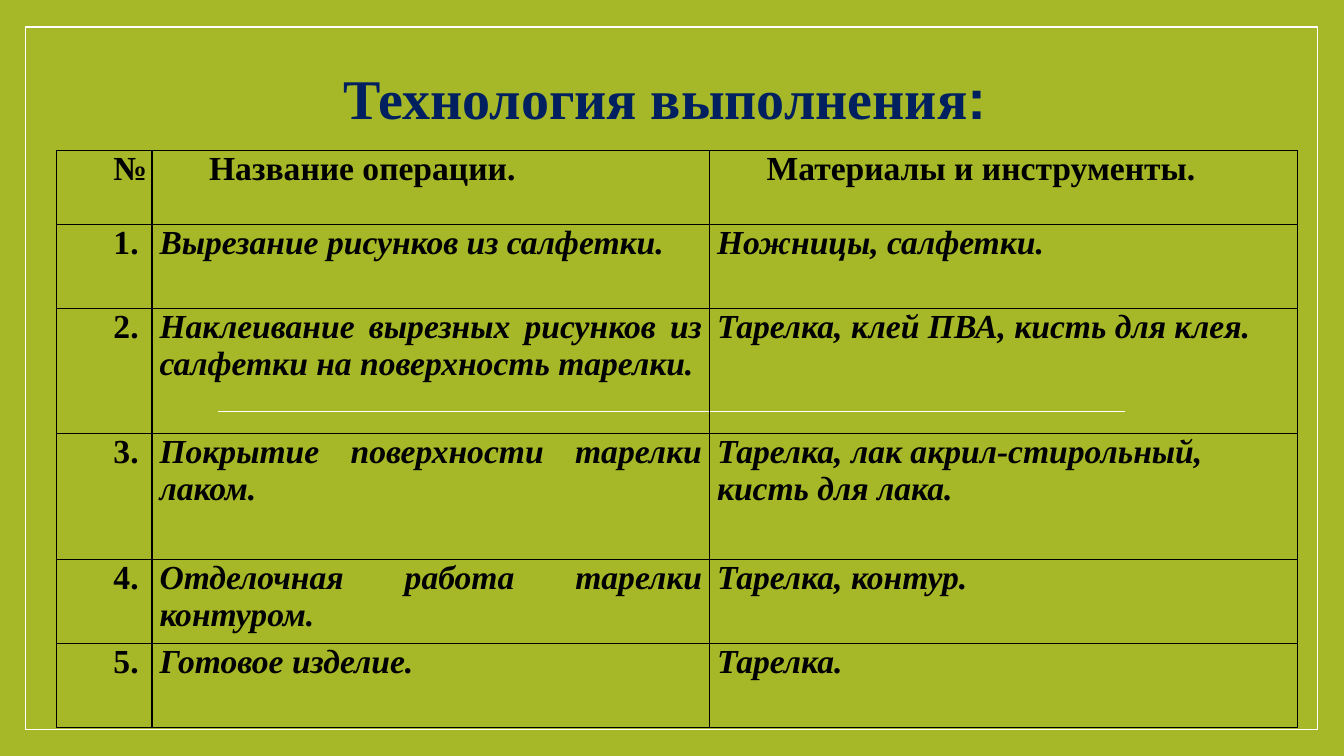
"""Build a slide with a table of the steps for decorating a plate."""
from lxml import etree
from pptx import Presentation
from pptx.dml.color import RGBColor
from pptx.enum.shapes import MSO_CONNECTOR, MSO_SHAPE
from pptx.enum.text import MSO_ANCHOR, PP_ALIGN
from pptx.oxml import parse_xml
from pptx.oxml.ns import qn
from pptx.util import Cm, Pt

LEFT, CENTER, JUSTIFY = PP_ALIGN.LEFT, PP_ALIGN.CENTER, PP_ALIGN.JUSTIFY
MIDDLE = MSO_ANCHOR.MIDDLE
RECTANGLE = MSO_SHAPE.RECTANGLE
STRAIGHT = MSO_CONNECTOR.STRAIGHT
COLORS = {"olive": "A6B727", "white": "FFFFFF", "navy": "002060", "black": "000000"}
DRAWING_NS = "http://schemas.openxmlformats.org/drawingml/2006/main"


def write(paragraph, text, size=24, color="black", font="Times New Roman",
          italic=False, align=LEFT, indent=0):
    """Add a bold run to the paragraph and set the paragraph's layout."""
    paragraph.alignment = align
    layout = paragraph._p.get_or_add_pPr()
    layout.set("marL", "0")
    layout.set("indent", str(Cm(indent)))
    run = paragraph.add_run()
    run.text = text
    run.font.name = font
    run.font.size = Pt(size)
    run.font.bold = True
    run.font.italic = italic
    run.font.color.rgb = RGBColor.from_string(COLORS[color])


presentation = Presentation()
presentation.slide_width, presentation.slide_height = Cm(33.87), Cm(19.05)
slide = presentation.slides.add_slide(presentation.slide_layouts[5])
slide.background.fill.solid()
slide.background.fill.fore_color.rgb = RGBColor.from_string(COLORS["olive"])

frame = slide.shapes.add_shape(RECTANGLE, Cm(0.64), Cm(0.68), Cm(32.56), Cm(17.7))
frame.shadow.inherit = False
frame.fill.solid()
frame.fill.fore_color.rgb = RGBColor.from_string(COLORS["olive"])
frame.line.color.rgb = RGBColor.from_string(COLORS["white"])
frame.line.width = Pt(1)
slide.shapes._spTree.insert(2, frame._element)

divider = slide.shapes.add_connector(STRAIGHT, Cm(5.49), Cm(10.36), Cm(28.35), Cm(10.36))
divider.line.color.rgb = RGBColor.from_string(COLORS["white"])
divider.line.width = Pt(0.79)
etree.SubElement(divider._element.spPr, qn("a:effectLst"))

title = slide.shapes.title
title.left, title.top, title.width, title.height = Cm(2.4), Cm(1.4), Cm(28.7), Cm(2.1)
title.text_frame.vertical_anchor = MIDDLE
heading = title.text_frame.paragraphs[0]
write(heading, "Технология выполнения", size=40, color="navy", align=CENTER)
write(heading, ":", size=40, color="navy", font="Arial", align=CENTER)

steps = [
    ("№", "Название операции.", "Материалы и инструменты."),
    ("1.", "Вырезание рисунков из салфетки.", "Ножницы, салфетки."),
    ("2.", "Наклеивание вырезных рисунков из салфетки на поверхность тарелки.",
     "Тарелка, клей ПВА, кисть для клея."),
    ("3.", "Покрытие поверхности тарелки лаком.",
     "Тарелка, лак акрил-стирольный,\nкисть для лака."),
    ("4.", "Отделочная работа тарелки контуром.", "Тарелка, контур."),
    ("5.", "Готовое изделие.", "Тарелка."),
]
column_widths = [2.41, 14.05, 14.81]
row_heights = [1.86, 2.12, 3.16, 3.16, 2.12, 2.12]

operations = slide.shapes.add_table(
    len(steps), len(column_widths), Cm(1.42), Cm(3.79),
    Cm(sum(column_widths)), Cm(sum(row_heights))).table
operations.first_row = operations.horz_banding = False
for column, width in zip(operations.columns, column_widths):
    column.width = Cm(width)

for row_index, (row, step, height) in enumerate(zip(operations.rows, steps, row_heights)):
    row.height = Cm(height)
    for column_index, (cell, text) in enumerate(zip(row.cells, step)):
        cell.margin_left = cell.margin_right = Cm(0.19)
        cell.margin_top = cell.margin_bottom = 0
        is_label = row_index == 0 or column_index == 0
        for line_index, line in enumerate(text.split("\n")):
            frame_text = cell.text_frame
            paragraph = frame_text.add_paragraph() if line_index else frame_text.paragraphs[0]
            write(paragraph, line, italic=not is_label,
                  align=JUSTIFY if column_index else LEFT,
                  indent=1.25 if is_label else 0)
        borders = cell._tc.get_or_add_tcPr()
        for side in ("lnL", "lnR", "lnT", "lnB"):
            borders.append(parse_xml(
                f'<a:{side} xmlns:a="{DRAWING_NS}" w="{Pt(1)}"><a:solidFill>'
                f'<a:srgbClr val="{COLORS["black"]}"/></a:solidFill></a:{side}>'))
        cell.fill.background()

presentation.save("out.pptx")
